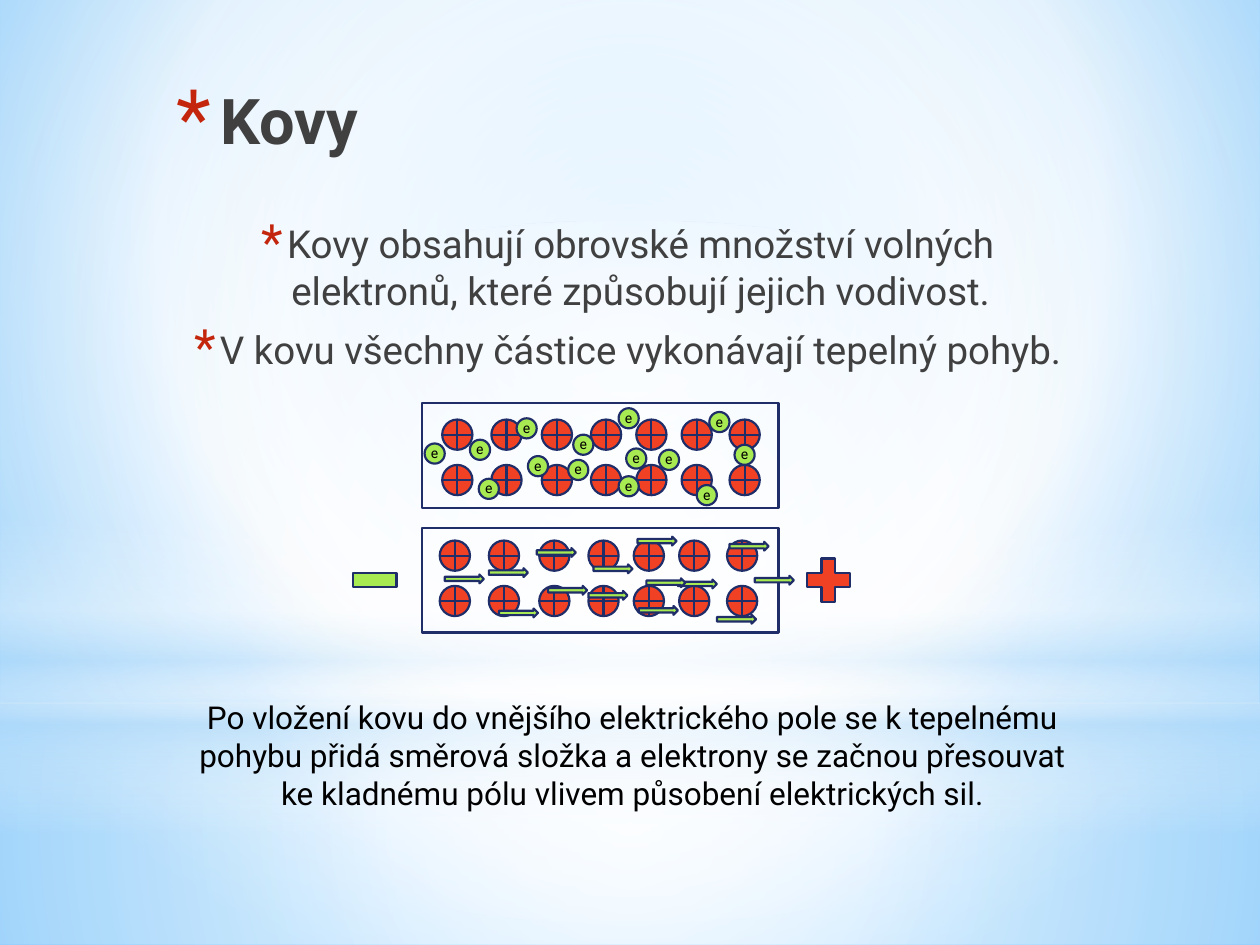
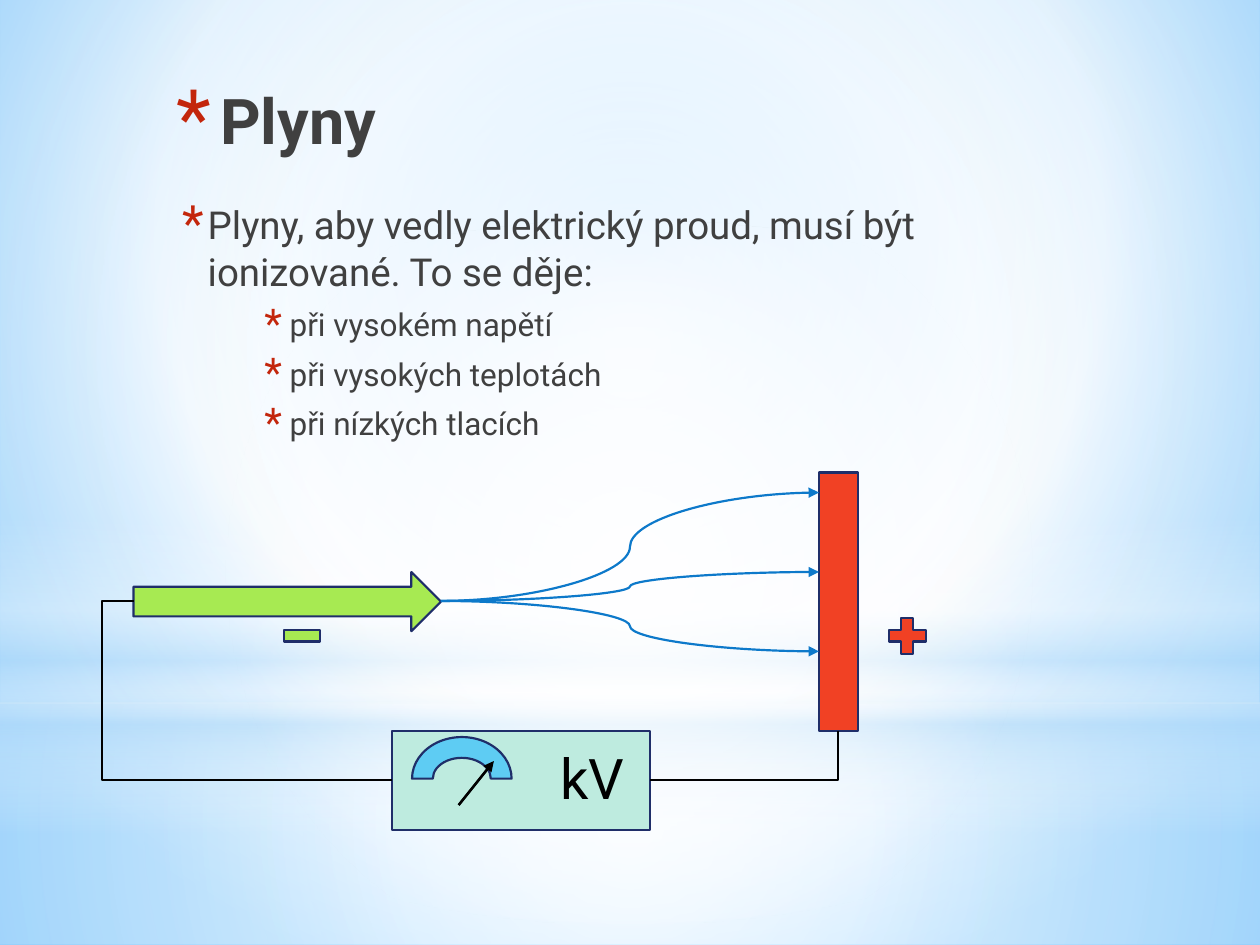
from lxml import etree
from pptx import Presentation
from pptx.dml.color import RGBColor
from pptx.enum.shapes import MSO_CONNECTOR, MSO_SHAPE
from pptx.enum.text import PP_ALIGN
from pptx.oxml import parse_xml
from pptx.oxml.ns import nsdecls, qn
from pptx.util import Inches, Pt

RECT, ELLIPSE, ARROW = MSO_SHAPE.RECTANGLE, MSO_SHAPE.OVAL, MSO_SHAPE.RIGHT_ARROW
ION, PLUS, MINUS = MSO_SHAPE.FLOWCHART_OR, MSO_SHAPE.MATH_PLUS, MSO_SHAPE.MATH_MINUS
PROCESS, DIAL = MSO_SHAPE.FLOWCHART_PROCESS, MSO_SHAPE.BLOCK_ARC
STRAIGHT, ELBOW, CURVE = MSO_CONNECTOR.STRAIGHT, MSO_CONNECTOR.ELBOW, MSO_CONNECTOR.CURVE
CENTER = PP_ALIGN.CENTER

FONT = "Roboto"
COLORS = {
    "sky": "9ED5FF", "deep_sky": "5BB9FF", "white": "FFFFFF", "haze": "B4DCFA",
    "text": "404040", "black": "000000", "bullet": "C3260C", "outline": "1F2E69",
    "positive": "F14124", "negative": "A7EA52", "meter": "BEEBDF", "dial": "5ECCF3",
    "discharge": "0D79CA",
}

MIDDLE = (50, 50, 50, 50)
BACKGROUND = [(0, "sky", 100), (60, "white", 100), (100, "deep_sky", 100)]
BANDS = [
    (RECT, (0, 5.58, 10, 1.92), [(0, "white", 91), (37, "white", 76), (100, "haze", 79)], MIDDLE),
    (RECT, (0, 0, 10, 5.58), [(0, "white", 89), (48, "white", 62), (100, "haze", 79)], MIDDLE),
    (RECT, (0, 4.12, 10, 2.5),
     [(0, "white", 0), (29, "white", 30), (45, "haze", 40),
      (55, "white", 26), (65, "haze", 60), (100, "white", 0)], None),
    (ELLIPSE, (0, 1.75, 10, 5.58), [(0, "white", 100), (56, "white", 0)], MIDDLE),
]

ION_COLUMNS = [0, 0.39, 0.79, 1.18, 1.54, 1.9, 2.28]
ION_ROWS = [0, 0.36]
FREE_ELECTRONS = [
    (0.38, 0.29), (0.45, 0.6), (0.02, 0.32), (0.75, 0.12), (0.84, 0.42),
    (1.2, 0.25), (1.16, 0.45), (1.56, 0.04), (1.56, 0.58), (1.62, 0.36),
    (1.88, 0.37), (2.28, 0.07), (2.18, 0.65), (2.48, 0.33),
]
DRIFTING_ELECTRONS = [
    (1, 0.46), (1.32, 0.5), (1.36, 0.29), (2.34, 0.69), (0.61, 0.64),
    (0.18, 0.37), (0.53, 0.32), (0.91, 0.16), (2.64, 0.38), (2.03, 0.41),
    (1.72, 0.62), (1.78, 0.4), (2.44, 0.11), (1.71, 0.07),
]


def rgb(name):
    return RGBColor.from_string(COLORS[name])


def inches(values):
    return [Inches(value) for value in values]


def gradient(stops, focus=None):
    marks = "".join(
        f'<a:gs pos="{pos * 1000}"><a:srgbClr val="{COLORS[color]}">'
        f'<a:alpha val="{alpha * 1000}"/></a:srgbClr></a:gs>'
        for pos, color, alpha in stops)
    if focus:
        edges = " ".join(f'{side}="{value * 1000}"' for side, value in zip("ltrb", focus))
        direction = f'<a:path path="circle"><a:fillToRect {edges}/></a:path>'
    else:
        direction = '<a:lin ang="5400000" scaled="0"/>'
    return parse_xml(f'<a:gradFill {nsdecls("a")} rotWithShape="1">'
                     f'<a:gsLst>{marks}</a:gsLst>{direction}</a:gradFill>')


def add_shape(slide, preset, box, fill=None, line="outline"):
    shape = slide.shapes.add_shape(preset, *inches(box))
    shape.shadow.inherit = False
    if fill:
        shape.fill.solid()
        shape.fill.fore_color.rgb = rgb(fill)
    else:
        shape.fill.background()
    if line:
        shape.line.color.rgb = rgb(line)
        shape.line.width = Pt(1.25)
    else:
        shape.line.fill.background()
    return shape


def add_line(slide, kind, start, end, color="black", width=1.5, arrow=False):
    line = slide.shapes.add_connector(kind, *inches(start + end))
    line.line.color.rgb = rgb(color)
    line.line.width = Pt(width)
    properties = line.element.spPr
    if arrow:
        outline = properties.find(qn("a:ln"))
        etree.SubElement(outline, qn("a:tailEnd"), type="triangle")
    etree.SubElement(properties, qn("a:effectLst"))
    return line


def add_run(paragraph, text, size, color="black", bold=False):
    run = paragraph.add_run()
    run.text = text
    run.font.name = FONT
    run.font.size = Pt(size)
    run.font.bold = bold
    run.font.color.rgb = rgb(color)


def add_bullet(paragraph, indent, hanging, size):
    properties = paragraph._p.get_or_add_pPr()
    properties.set("marL", str(Inches(indent)))
    properties.set("indent", str(-Inches(hanging)))
    color = etree.SubElement(properties, qn("a:buClr"))
    etree.SubElement(color, qn("a:srgbClr"), val=COLORS["bullet"])
    etree.SubElement(properties, qn("a:buSzPct"), val=str(size * 1000))
    etree.SubElement(properties, qn("a:buFont"), typeface=FONT)
    etree.SubElement(properties, qn("a:buChar"), char="*")


def add_text(slide, box, wrap=True):
    frame = slide.shapes.add_textbox(*inches(box)).text_frame
    frame.word_wrap = wrap
    return frame


def add_label(slide, box, text, size, align=None, wrap=False):
    frame = add_text(slide, box, wrap)
    frame.paragraphs[0].alignment = align
    add_run(frame.paragraphs[0], text, size)
    return frame


def add_body(slide, box, points, align=None):
    frame = add_text(slide, box)
    for index, (level, text) in enumerate(points):
        size, indent = (18, 0.9) if level else (22, 0.25)
        paragraph = frame.add_paragraph() if index else frame.paragraphs[0]
        paragraph.level = level
        paragraph.alignment = align
        paragraph.space_before = Pt(size * 0.2)
        paragraph.space_after = Pt(3)
        add_bullet(paragraph, indent, 0.2, 130)
        add_run(paragraph, text, size, "text")


def start_slide(deck, title):
    slide = deck.slides.add_slide(deck.slide_layouts[6])
    slide.background.fill.solid()
    backdrop = slide.element.find(".//" + qn("p:bgPr"))
    backdrop.replace(backdrop[0], gradient(BACKGROUND, (20, 10, 20, 60)))
    for preset, box, stops, focus in BANDS:
        band = add_shape(slide, preset, box, line=None)
        properties = band.element.spPr
        properties.replace(properties.find(qn("a:noFill")), gradient(stops, focus))
    heading = add_text(slide, (1.3, 0.6, 7.12, 1.25)).paragraphs[0]
    add_bullet(heading, 0.35, 0.35, 128)
    add_run(heading, title, 36, "text", bold=True)
    return slide


def add_charges(slide, minus, plus):
    add_shape(slide, MINUS, minus, "negative")
    add_shape(slide, PLUS, plus, "positive")


def add_metal(slide, left, top, lattice_left, lattice_top):
    add_shape(slide, RECT, (left, top, 2.83, 0.83))
    for row in ION_ROWS:
        for column in ION_COLUMNS:
            ion = (left + lattice_left + column, top + lattice_top + row, 0.24, 0.24)
            add_shape(slide, ION, ion, "positive")


def add_thermal_motion(slide, left, top):
    add_metal(slide, left, top, 0.16, 0.13)
    for dx, dy in FREE_ELECTRONS:
        x, y = left + dx, top + dy
        add_shape(slide, ELLIPSE, (x, y, 0.16, 0.16), "negative")
        symbol = add_label(slide, (x - 0.03, y - 0.04, 0.16, 0.24), "e", 8)
        symbol.margin_left, symbol.margin_right = Inches(0.08), 0


def add_directed_motion(slide, left, top):
    add_metal(slide, left, top, 0.14, 0.1)
    add_charges(slide, (left - 0.61, top + 0.18, 0.47, 0.47),
                (left + 2.99, top + 0.18, 0.47, 0.47))
    for dx, dy in DRIFTING_ELECTRONS:
        add_shape(slide, ARROW, (left + dx, top + dy, 0.31, 0.07), "negative")


def add_voltmeter(slide, left, top):
    add_shape(slide, PROCESS, (left, top, 2.05, 0.79), "meter")
    add_shape(slide, DIAL, (left + 0.16, top + 0.05, 0.79, 0.66), "dial")
    add_label(slide, (left + 1.24, top + 0.05, 0.75, 0.64), "kV", 32)
    add_line(slide, STRAIGHT, (left + 0.53, top + 0.59), (left + 0.81, top + 0.24), arrow=True)


def add_discharge_circuit(slide, left, top):
    cathode_y, meter_y = top + 1.02, top + 2.44
    meter_left, anode_left = left + 2.05, left + 5.44
    add_shape(slide, ARROW, (left, top + 0.79, 2.44, 0.47), "negative")
    add_shape(slide, RECT, (anode_left, top, 0.31, 2.05), "positive")
    add_voltmeter(slide, meter_left, top + 2.05)

    cathode_wire = add_line(slide, ELBOW, (left, cathode_y), (meter_left, meter_y))
    bend = cathode_wire.element.spPr.find(qn("a:prstGeom")).get_or_add_avLst()
    etree.SubElement(bend, qn("a:gd"), name="adj1", fmla="val -12200")
    anode_wire = add_line(slide, ELBOW, (meter_left + 2.05, meter_y),
                          (anode_left + 0.15, top + 2.05))
    anode_wire.element.spPr.find(qn("a:prstGeom")).set("prst", "bentConnector2")

    add_charges(slide, (left + 1.14, top + 1.1, 0.39, 0.39),
                (left + 5.94, top + 1.1, 0.4, 0.39))
    for hit in (1.42, 0.79, 0.16):
        add_line(slide, CURVE, (left + 2.44, cathode_y), (anode_left, top + hit),
                 "discharge", 1.25, arrow=True)


def build_metals(deck):
    slide = start_slide(deck, "Kovy")
    add_body(slide, (1.3, 1.7, 7.32, 4.88), [
        (0, "Kovy obsahují obrovské množství volných elektronů, které způsobují jejich vodivost."),
        (0, "V kovu všechny částice vykonávají tepelný pohyb."),
    ], CENTER)
    add_thermal_motion(slide, 3.35, 3.2)
    add_directed_motion(slide, 3.35, 4.19)
    add_label(slide, (1.36, 5.49, 7.32, 1.01),
              "Po vložení kovu do vnějšího elektrického pole se k tepelnému pohybu přidá "
              "směrová složka a elektrony se začnou přesouvat ke kladnému pólu vlivem "
              "působení elektrických sil.", 18, CENTER, wrap=True)


def build_gases(deck):
    slide = start_slide(deck, "Plyny")
    add_body(slide, (1.3, 1.55, 7.32, 2.28), [
        (0, "Plyny, aby vedly elektrický proud, musí být ionizované. To se děje:"),
        (1, "při vysokém napětí"),
        (1, "při vysokých teplotách"),
        (1, "při nízkých tlacích"),
    ])
    add_discharge_circuit(slide, 1.06, 3.75)


def main():
    deck = Presentation()
    deck.slide_width, deck.slide_height = Inches(10), Inches(7.5)
    build_metals(deck)
    build_gases(deck)
    deck.save("out.pptx")


if __name__ == "__main__":
    main()
